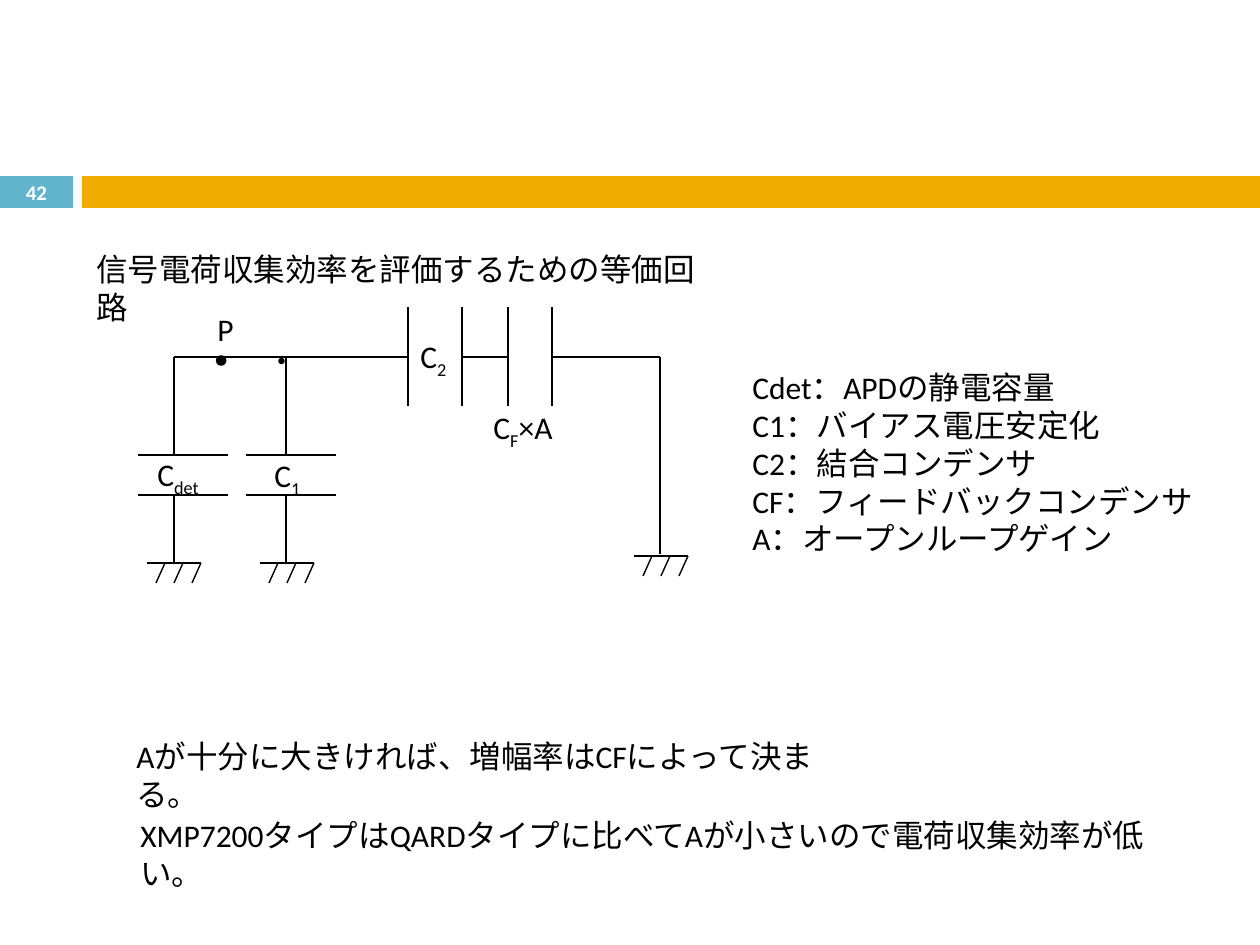
from lxml.etree import SubElement
from pptx import Presentation
from pptx.dml.color import RGBColor
from pptx.enum.shapes import MSO_CONNECTOR, MSO_SHAPE
from pptx.enum.text import MSO_ANCHOR, PP_ALIGN
from pptx.oxml.ns import qn
from pptx.util import Emu, Pt

PX_PER_INCH = 126
WIRE_Y = 357
PLATE_TOP, PLATE_BOTTOM = 307, 406
GROUND_Y = 563


def px(value):
    return Emu(round(value * 914400 / PX_PER_INCH))


def color(hex_string):
    return RGBColor.from_string(hex_string)


def add_bar(page, left, top, width, height, fill):
    bar = page.shapes.add_shape(
        MSO_SHAPE.RECTANGLE, px(left), px(top), px(width), px(height))
    bar.shadow.inherit = False
    bar.fill.solid()
    bar.fill.fore_color.rgb = color(fill)
    bar.line.fill.background()


def add_wire(page, x1, y1, x2, y2):
    wire = page.shapes.add_connector(
        MSO_CONNECTOR.STRAIGHT, px(x1), px(y1), px(x2), px(y2))
    wire.line.color.rgb = color("000000")
    wire.line.width = Pt(0.79)
    SubElement(wire._element.spPr, qn("a:effectLst"))


def add_text(page, left, top, width, height, lines, size=18, ink="000000",
             bold=False, wrap=True, align=PP_ALIGN.LEFT, anchor=MSO_ANCHOR.TOP):
    box = page.shapes.add_textbox(px(left), px(top), px(width), px(height))
    frame = box.text_frame
    frame.word_wrap = wrap
    frame.vertical_anchor = anchor
    for index, line in enumerate(lines):
        para = frame.paragraphs[0] if index == 0 else frame.add_paragraph()
        para.alignment = align
        para.font.name = "Calibri"
        para.font.size = Pt(size)
        para.font.bold = bold
        para.font.color.rgb = color(ink)
        para.add_run().text = line
    return box


def add_symbol(page, left, top, width, subscript, suffix=""):
    box = add_text(page, left, top, width, 50, ["C"], wrap=False)
    para = box.text_frame.paragraphs[0]
    span = para.add_run()
    span.text = subscript
    span._r.get_or_add_rPr().set("baseline", "-25000")
    if suffix:
        para.add_run().text = suffix


def add_ground(page, left, top):
    add_wire(page, left, top, left + 54, top)
    for step in (18, 36, 54):
        add_wire(page, left + step, top, left + step - 9, top + 20)


def add_grounded_capacitor(page, x, plate_left, ground_left):
    add_wire(page, x, WIRE_Y, x, 455)
    for y in (455, 495):
        add_wire(page, plate_left, y, plate_left + 90, y)
    add_wire(page, x, 495, x, GROUND_Y)
    add_ground(page, ground_left, GROUND_Y)


def add_circuit(page):
    for start, end in ((174, 408), (462, 508), (552, 660)):
        add_wire(page, start, WIRE_Y, end, WIRE_Y)
    for x in (408, 462, 508, 552):
        add_wire(page, x, PLATE_TOP, x, PLATE_BOTTOM)
    add_grounded_capacitor(page, 174, 138, 147)
    add_grounded_capacitor(page, 286, 246, 260)
    add_wire(page, 660, WIRE_Y, 660, 554)
    add_ground(page, 634, 556)

    add_text(page, 205, 304, 44, 50, ["P"])
    add_text(page, 265, 345, 39, 30, ["●"], size=8, wrap=False)
    add_text(page, 202, 339, 48, 40, ["●"], size=13, wrap=False)
    add_symbol(page, 145, 449, 73, "det")
    add_symbol(page, 262, 450, 57, "1")
    add_symbol(page, 408, 331, 57, "2")
    add_symbol(page, 481, 402, 117, "F", "×A")


def main():
    deck = Presentation()
    deck.slide_width, deck.slide_height = px(1260), px(945)
    page = deck.slides.add_slide(deck.slide_layouts[6])

    add_bar(page, 0, 176, 73, 32, "60B5CC")
    add_bar(page, 82, 176, 1178, 32, "F0AD00")
    add_text(page, 0, 175, 73, 34, ["42"], size=11.9, ink="FFFFFF", bold=True,
             align=PP_ALIGN.CENTER, anchor=MSO_ANCHOR.MIDDLE)
    add_circuit(page)
    add_text(page, 740, 362, 496, 204, [
        "Cdet：APDの静電容量",
        "C1：バイアス電圧安定化",
        "C2：結合コンデンサ",
        "CF：フィードバックコンデンサ",
        "A：オープンループゲイン",
    ])
    add_text(page, 84, 244, 649, 50,
             ["信号電荷収集効率を評価するための等価回路"])
    add_text(page, 124, 731, 725, 50,
             ["Aが十分に大きければ、増幅率はCFによって決まる。"])
    add_text(page, 128, 810, 1037, 50,
             ["XMP7200タイプはQARDタイプに比べてAが小さいので電荷収集効率が低い。"])
    deck.save("out.pptx")


if __name__ == "__main__":
    main()
